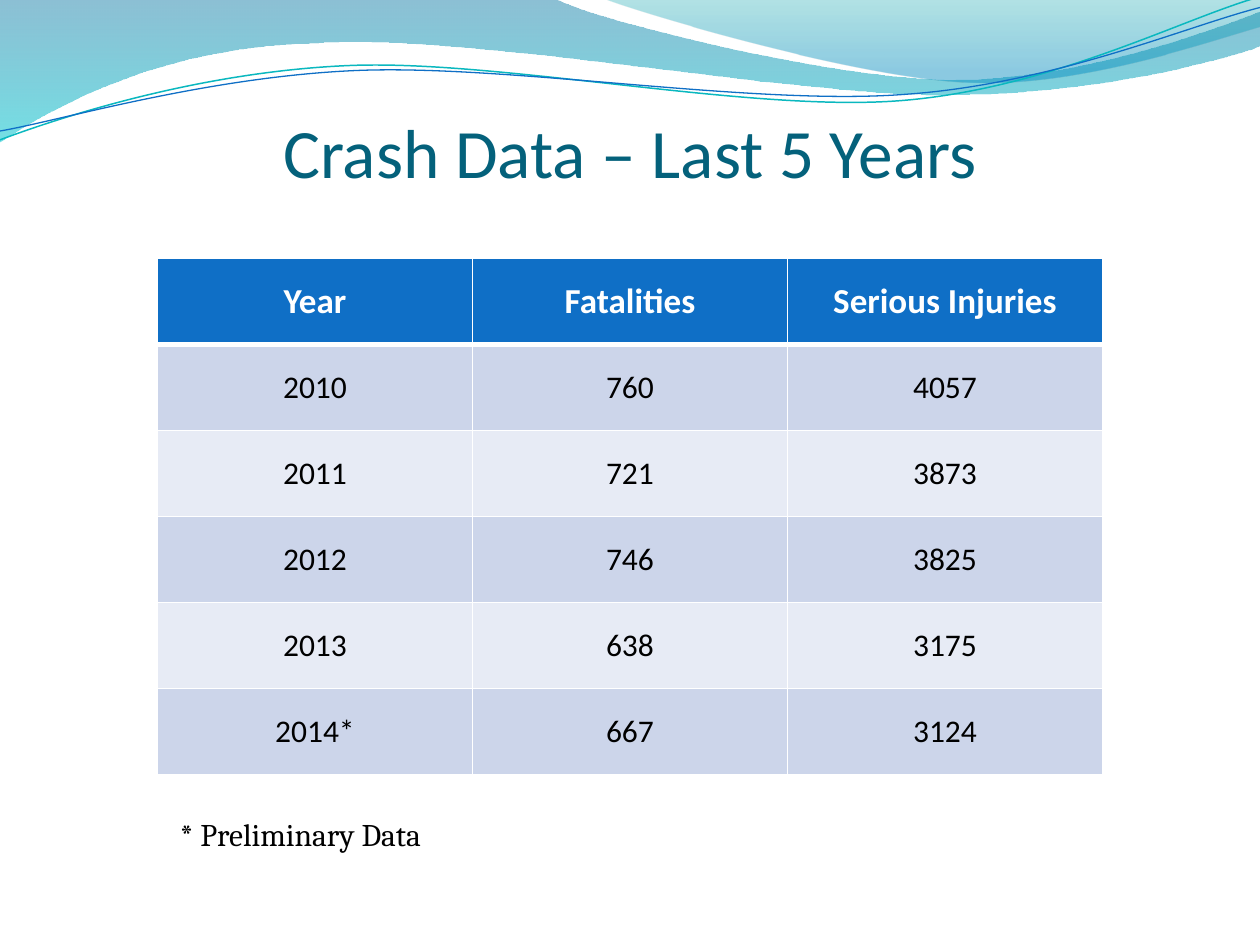
import math
from dataclasses import dataclass

from lxml import etree
from pptx import Presentation
from pptx import util as u
from pptx.dml.color import RGBColor
from pptx.enum import text
from pptx.oxml.ns import qn

COLORS = {
    "white": "FFFFFF", "black": "000000", "title": "04617B", "header": "0F6FC6",
    "band_dark": "CCD5EA", "band_light": "E7EBF5", "teal": "0AB8BF",
    "deep_blue": "0074A1", "aqua": "00C6CF", "sea": "00A1A9", "sky": "008BBF",
}
ROWS = [
    ("Year", "Fatalities", "Serious Injuries"),
    ("2010", "760", "4057"),
    ("2011", "721", "3873"),
    ("2012", "746", "3825"),
    ("2013", "638", "3175"),
    ("2014*", "667", "3124"),
]
TILT = -2.7

Point = tuple[float, float]


@dataclass
class Stop:
    position: float
    color: str
    opacity: int


@dataclass
class Wave:
    """Segments hold one point (line) or three points (cubic curve)."""
    start: Point
    segments: list[tuple[Point, ...]]
    stops: tuple[Stop, ...] = ()
    line: str = ""
    width: float = 0
    pivot: Point | None = None


WAVES = [
    Wave((0, 0), [
        ((4.4, -0.01),),
        ((4.76, 0.17), (6.64, 0.63), (7.58, 0.63)),
        ((8.53, 0.63), (9.58, 0.26), (10, 0.09)),
        ((10.01, 0.36),),
        ((9.83, 0.44), (8.7, 0.76), (7.46, 0.75)),
        ((6.22, 0.75), (3.82, 0.28), (2.57, 0.34)),
        ((1.29, 0.36), (0.46, 0.83), (-0.01, 1.13)),
        ((0, 0),),
    ], stops=(Stop(0, "deep_blue", 45), Stop(1, "aqua", 55))),
    Wave((4.79, -0.01), [
        ((5.09, 0.11), (6.82, 0.62), (7.69, 0.65)),
        ((8.56, 0.69), (9.61, 0.32), (10, 0.21)),
        ((10, 0),),
        ((4.79, -0.01),),
    ], stops=(Stop(0, "sea", 30), Stop(0.8, "sky", 45))),
    Wave((0, 1.11), [
        ((0.48, 0.93), (1.58, 0.57), (2.77, 0.52)),
        ((3.95, 0.47), (5.93, 0.89), (7.13, 0.8)),
        ((8.33, 0.71), (9.38, 0.15), (9.98, -0.02)),
    ], line="teal", width=0.85, pivot=(4.99, 0.58)),
    Wave((0, 1.04), [
        ((0.47, 0.96), (1.64, 0.61), (2.83, 0.56)),
        ((4.03, 0.51), (5.97, 0.84), (7.17, 0.75)),
        ((8.36, 0.67), (9.41, 0.21), (10, 0.06)),
    ], line="header", width=0.75, pivot=(5, 0.59)),
]


def rgb(name: str) -> RGBColor:
    return RGBColor.from_string(COLORS[name])


def level(point: Point, pivot: Point) -> Point:
    """Undo the tilt, which the shape's own rotation then puts back."""
    a = math.radians(-TILT)
    dx, dy = point[0] - pivot[0], point[1] - pivot[1]
    return (pivot[0] + dx * math.cos(a) - dy * math.sin(a),
            pivot[1] + dx * math.sin(a) + dy * math.cos(a))


def bend(sp, segments: list[tuple[Point, ...]]) -> None:
    """Join each run of three straight steps into one cubic curve."""
    steps = sp._element.spPr.iter(qn("a:lnTo"))
    steps = iter(list(steps))
    for seg in segments:
        group = [next(steps) for _ in seg]
        if len(group) == 3:
            curve = etree.Element(qn("a:cubicBezTo"))
            group[0].addprevious(curve)
            for step in group:
                curve.append(step[0])
                step.getparent().remove(step)


def add_wave(s, wave: Wave) -> None:
    points = [wave.start] + [p for seg in wave.segments for p in seg]
    if wave.pivot:
        points = [level(p, wave.pivot) for p in points]
    points = [(u.Inches(x), u.Inches(y)) for x, y in points]
    builder = s.shapes.build_freeform(*points[0])
    builder.add_line_segments(points[1:], close=bool(wave.stops))
    sp = builder.convert_to_shape()
    bend(sp, wave.segments)
    sp.shadow.inherit = False
    if wave.pivot:
        sp.rotation = TILT
    if not wave.stops:
        sp.fill.background()
        sp.line.color.rgb = rgb(wave.line)
        sp.line.width = u.Pt(wave.width)
        return
    sp.line.fill.background()
    sp.fill.gradient()
    sp.fill.gradient_angle = 270
    for gs, stop in zip(sp.fill.gradient_stops, wave.stops):
        gs.position = stop.position
        gs.color.rgb = rgb(stop.color)
    for clr, stop in zip(sp._element.spPr.iter(qn("a:srgbClr")), wave.stops):
        etree.SubElement(clr, qn("a:alpha"), val=str(stop.opacity * 1000))


def add_run(p, content: str, size: float, font: str, color: str, bold: bool = False) -> None:
    r = p.add_run()
    r.text = content
    r.font.size, r.font.name, r.font.bold = u.Pt(size), font, bold
    r.font.color.rgb = rgb(color)


def add_label(s, box: tuple[float, ...], content: str, size: float, font: str, color: str):
    tf = s.shapes.add_textbox(*map(u.Inches, box)).text_frame
    tf.word_wrap = True
    add_run(tf.paragraphs[0], content, size, font, color)
    return tf


def set_borders(cell, bottom: float, top: float) -> None:
    tc_pr = cell._tc.get_or_add_tcPr()
    for i, (side, width) in enumerate((("L", 1), ("R", 1), ("T", top), ("B", bottom))):
        ln = etree.Element(qn(f"a:ln{side}"), w=str(u.Pt(width)))
        fill = etree.SubElement(ln, qn("a:solidFill"))
        etree.SubElement(fill, qn("a:srgbClr"), val=COLORS["white"])
        tc_pr.insert(i, ln)


def add_crash_table(s) -> None:
    box = map(u.Inches, (1.25, 2.05, 7.5, 4.1))
    table = s.shapes.add_table(len(ROWS), len(ROWS[0]), *box).table
    for i, row in enumerate(ROWS):
        header = i == 0
        band = "header" if header else "band_dark" if i % 2 else "band_light"
        for j, content in enumerate(row):
            cell = table.cell(i, j)
            cell.fill.solid()
            cell.fill.fore_color.rgb = rgb(band)
            cell.vertical_anchor = text.MSO_ANCHOR.MIDDLE
            set_borders(cell, bottom=3 if header else 1, top=3 if i == 1 else 1)
            p = cell.text_frame.paragraphs[0]
            p.alignment = text.PP_ALIGN.CENTER
            add_run(p, content, 20 if header else 18, "Calibri",
                    "white" if header else "black", header)


def main() -> None:
    prs = Presentation()
    prs.slide_width, prs.slide_height = u.Inches(10), u.Inches(7.5)
    s = prs.slides.add_slide(prs.slide_layouts[6])
    for wave in WAVES:
        add_wave(s, wave)
    add_crash_table(s)
    title = add_label(s, (0.5, 0.9, 9, 0.67), "Crash Data – Last 5 Years", 39.6, "Calibri", "title")
    title.vertical_anchor = text.MSO_ANCHOR.BOTTOM
    title.paragraphs[0].alignment = text.PP_ALIGN.CENTER
    title.paragraphs[0].line_spacing = 0.8
    note = add_label(s, (1.33, 6.42, 4.92, 0.4), "* Preliminary Data", 18, "Cambria", "black")
    note.auto_size = text.MSO_AUTO_SIZE.SHAPE_TO_FIT_TEXT
    prs.save("out.pptx")


if __name__ == "__main__":
    main()
